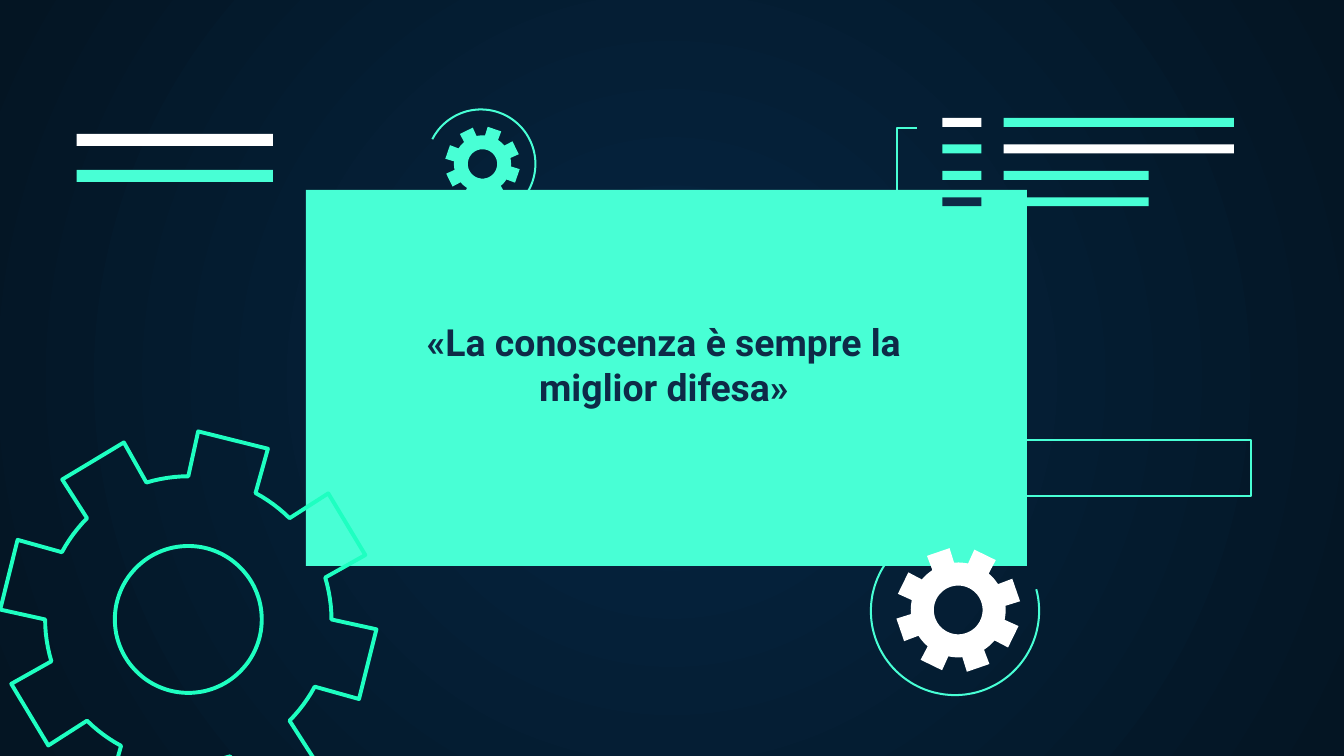
import math

import lxml.etree
import pptx
import pptx.dml.color
import pptx.enum.shapes
import pptx.enum.text
import pptx.oxml.ns
import pptx.util

Cm = pptx.util.Cm
MINT, WHITE, NAVY, GREEN = "48FFD5", "FFFFFF", "0E2A47", "1EFFC1"


def color(hex_text):
    return pptx.dml.color.RGBColor.from_string(hex_text)


def arc_points(center, radius, start, end, step=3):
    """Points along a circle in cm; degrees run clockwise from the top."""
    count = max(1, math.ceil((end - start) / step))
    angles = [math.radians(start + (end - start) * i / count) for i in range(count + 1)]
    return [(center[0] + radius * math.sin(a), center[1] - radius * math.cos(a))
            for a in angles]


class SlideBuilder:
    font = "Roboto"
    thin = 1.09

    def __init__(self, deck):
        self.page = deck.slides.add_slide(deck.slide_layouts[5])

    def background(self, inner, outer):
        """Fill the slide with a gradient that spreads from its centre."""
        fill = self.page.background.fill
        fill.gradient()
        for stop, shade in zip(fill.gradient_stops, (inner, outer)):
            stop.color.rgb = color(shade)
        qn = pptx.oxml.ns.qn
        gradient = self.page.element.find(".//" + qn("a:gradFill"))
        gradient.remove(gradient.find(qn("a:lin")))
        spread = lxml.etree.SubElement(gradient, qn("a:path"), {"path": "circle"})
        lxml.etree.SubElement(spread, qn("a:fillToRect"), dict.fromkeys("ltrb", "50000"))

    def paint(self, shape, fill=None, line=None, width=thin):
        shape.shadow.inherit = False
        if fill:
            shape.fill.solid()
            shape.fill.fore_color.rgb = color(fill)
        else:
            shape.fill.background()
        if line:
            shape.line.color.rgb = color(line)
            shape.line.width = pptx.util.Pt(width)
        else:
            shape.line.fill.background()

    def rectangle(self, left, top, width, height, **style):
        shape = self.page.shapes.add_shape(
            pptx.enum.shapes.MSO_SHAPE.RECTANGLE,
            Cm(left), Cm(top), Cm(width), Cm(height))
        self.paint(shape, **style)

    def outline(self, *contours, closed=False, **style):
        builder = None
        for contour in contours:
            first, *rest = [(Cm(x), Cm(y)) for x, y in contour]
            if builder is None:
                builder = self.page.shapes.build_freeform(*first, scale=1.0)
            else:
                builder.move_to(*first)
            builder.add_line_segments(rest, close=closed)
        self.paint(builder.convert_to_shape(), **style)

    def gear(self, center, radius, turn, **style):
        """Draw eight teeth, the first one turned by some degrees, and a hub hole."""
        rim = []
        for tooth in range(8):
            angle = turn + 45 * tooth
            rim += arc_points(center, radius, angle - 11, angle + 11, step=22)
            rim += arc_points(center, radius * 0.76, angle + 14, angle + 31)
        hub = arc_points(center, radius * 0.39, 0, 360)[::-1]
        self.outline(rim, hub, closed=True, **style)

    def quote(self, text, left, top, width, height, size):
        box = self.page.shapes.title
        box.left, box.top, box.width, box.height = map(Cm, (left, top, width, height))
        self.page.shapes.element.append(box.element)  # bring to front
        frame = box.text_frame
        frame.word_wrap = True
        frame.auto_size = pptx.enum.text.MSO_AUTO_SIZE.NONE
        frame.vertical_anchor = pptx.enum.text.MSO_ANCHOR.TOP
        frame.margin_left = frame.margin_right = Cm(0.25)
        frame.margin_top = frame.margin_bottom = Cm(0.25)
        para = frame.paragraphs[0]
        para.alignment = pptx.enum.text.PP_ALIGN.CENTER
        span = para.add_run()
        span.text = text
        span.font.name = self.font
        span.font.size = pptx.util.Pt(size)
        span.font.bold = True
        span.font.color.rgb = color(NAVY)


def main():
    deck = pptx.Presentation()
    deck.slide_width, deck.slide_height = Cm(25.4), Cm(14.29)
    slide = SlideBuilder(deck)
    slide.background("052643", "041523")
    slide.rectangle(5.78, 3.59, 13.63, 7.11, fill=MINT)

    # Gears and their orbits
    slide.outline(arc_points((9.09, 3.1), 1.03, -63, 185), line=MINT)
    slide.outline(arc_points((18.05, 11.55), 1.59, 75, 323), line=MINT)
    slide.gear((3.56, 11.71), 3.56, 14, line=GREEN, width=2.1)
    slide.gear((18.11, 11.53), 1.18, -19, fill=WHITE)
    slide.gear((9.12, 3.1), 0.71, 19, fill=MINT)

    # List of short and long bars with its bracket
    rows = [(WHITE, MINT, 4.35), (MINT, WHITE, 4.35), (MINT, MINT, 2.74), (NAVY, MINT, 2.74)]
    for index, (marker, bar, length) in enumerate(rows):
        top = 2.23 + 0.5 * index
        slide.rectangle(17.81, top, 0.74, 0.17, fill=marker)
        slide.rectangle(18.97, top, length, 0.17, fill=bar)
    slide.outline([(17.34, 3.96), (16.95, 3.96), (16.95, 2.42), (17.33, 2.42)], line=MINT)

    for top, shade in ((2.53, WHITE), (3.21, MINT)):
        slide.rectangle(1.45, top, 3.71, 0.23, fill=shade)
    slide.rectangle(18.29, 8.32, 5.35, 1.06, line=MINT)

    slide.quote("«La conoscenza è sempre la miglior difesa»", 7.75, 5.79, 9.6, 3.94, 20)
    deck.save("out.pptx")


if __name__ == "__main__":
    main()
